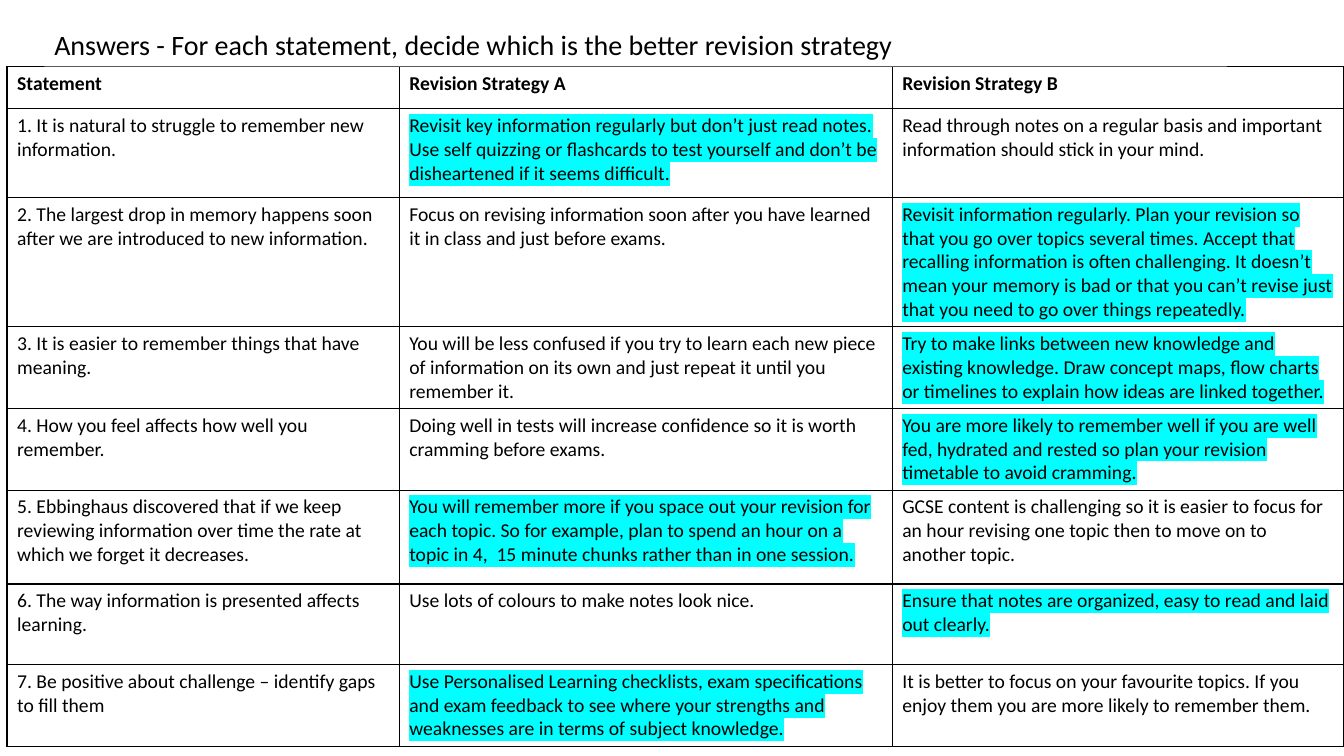
"""Build a slide that marks the better revision strategy for each statement."""
from dataclasses import dataclass

from lxml.etree import SubElement
from pptx import Presentation
from pptx.dml.color import RGBColor
from pptx.enum.shapes import MSO_SHAPE as Preset
from pptx.enum.text import MSO_ANCHOR as Anchor, MSO_AUTO_SIZE as AutoSize, PP_ALIGN as Align
from pptx.oxml.ns import qn
from pptx.slide import Slide
from pptx.table import _Cell as Cell
from pptx.text.text import _Paragraph as Paragraph
from pptx.util import Inches, Pt

BLACK = RGBColor(0x00, 0x00, 0x00)
WHITE = RGBColor(0xFF, 0xFF, 0xFF)
CYAN = RGBColor(0x00, 0xFF, 0xFF)
FONT = "Calibri"
BORDER_WIDTH = Pt(1)

GRID_COLUMNS, GRID_ROWS = 1333, 750
GRID_UNIT = Inches(0.01)
TABLE_LEFT, TABLE_TOP = 7, 66
COLUMN_SPANS = (389, 489, 448)
HEADINGS = ("Statement", "Revision Strategy A", "Revision Strategy B")
HEADING_SPAN = 42
TITLE = "Answers - For each statement, decide which is the better revision strategy"


@dataclass(frozen=True)
class Answer:
    statement: str
    strategy_a: str
    strategy_b: str
    better: str
    row_span: int = 80


ANSWERS = (
    Answer(
        "1. It is natural to struggle to remember new information.",
        "Revisit key information regularly but don’t just read notes. Use self quizzing or "
        "flashcards to test yourself and don’t be disheartened if it seems difficult.",
        "Read through notes on a regular basis and important information should stick in "
        "your mind.",
        "A", 88),
    Answer(
        "2. The largest drop in memory happens soon after we are introduced to new information.",
        "Focus on revising information soon after you have learned it in class and just "
        "before exams.",
        "Revisit information regularly. Plan your revision so that you go over topics several "
        "times. Accept that recalling information is often challenging. It doesn’t mean your "
        "memory is bad or that you can’t revise just that you need to go over things "
        "repeatedly.",
        "B"),
    Answer(
        "3. It is easier to remember things that have meaning.",
        "You will be less confused if you try to learn each new piece of information on its "
        "own and just repeat it until you remember it.",
        "Try to make links between new knowledge and existing knowledge. Draw concept maps, "
        "flow charts or timelines to explain how ideas are linked together.",
        "B"),
    Answer(
        "4. How you feel affects how well you remember.",
        "Doing well in tests will increase confidence so it is worth cramming before exams.",
        "You are more likely to remember well if you are well fed, hydrated and rested so "
        "plan your revision timetable to avoid cramming.",
        "B", 72),
    Answer(
        "5. Ebbinghaus discovered that if we keep reviewing information over time the rate at "
        "which we forget it decreases.",
        "You will remember more if you space out your revision for each topic. So for "
        "example, plan to spend an hour on a topic in 4,  15 minute chunks rather than in "
        "one session.",
        "GCSE content is challenging so it is easier to focus for an hour revising one topic "
        "then to move on to another topic.",
        "A", 93),
    Answer(
        "6. The way information is presented affects learning.",
        "Use lots of colours to make notes look nice.",
        "Ensure that notes are organized, easy to read and laid out clearly.",
        "B"),
    Answer(
        "7. Be positive about challenge – identify gaps to fill them",
        "Use Personalised Learning checklists, exam specifications and exam feedback to see "
        "where your strengths and weaknesses are in terms of subject knowledge.",
        "It is better to focus on your favourite topics. If you enjoy them you are more "
        "likely to remember them.",
        "A"),
)


def grid(span: int) -> int:
    """Turn a number of grid columns or rows into a length."""
    return span * GRID_UNIT


def add_run(paragraph: Paragraph, text: str, size: int, bold: bool = False,
            highlighted: bool = False) -> None:
    """Add one run of text, with a cyan highlight where asked."""
    run = paragraph.add_run()
    run.text = text
    run.font.size = Pt(size)
    run.font.bold = bold
    run.font.color.rgb = BLACK
    if highlighted:
        highlight = SubElement(run._r.get_or_add_rPr(), qn("a:highlight"))
        SubElement(highlight, qn("a:srgbClr"), val=str(CYAN))
    run.font.name = FONT


def add_borders(cell: Cell) -> None:
    """Draw a thin black line on every side of a cell."""
    properties = cell._tc.get_or_add_tcPr()
    for side in ("a:lnL", "a:lnR", "a:lnT", "a:lnB"):
        line = SubElement(properties, qn(side), w=str(BORDER_WIDTH))
        fill = SubElement(line, qn("a:solidFill"))
        SubElement(fill, qn("a:srgbClr"), val=str(BLACK))


def fill_cell(cell: Cell, text: str, bold: bool = False, highlighted: bool = False) -> None:
    """Style a cell and write its text."""
    add_borders(cell)
    cell.fill.solid()
    cell.fill.fore_color.rgb = WHITE
    add_run(cell.text_frame.paragraphs[0], text, 14, bold, highlighted)


def add_answer_table(slide: Slide) -> None:
    """Add the table of statements and strategies."""
    row_spans = (HEADING_SPAN, *(answer.row_span for answer in ANSWERS))
    table = slide.shapes.add_table(
        len(row_spans), len(COLUMN_SPANS), grid(TABLE_LEFT), grid(TABLE_TOP),
        grid(sum(COLUMN_SPANS)), grid(sum(row_spans))).table
    table.first_row = table.horz_banding = False
    for column, span in zip(table.columns, COLUMN_SPANS):
        column.width = grid(span)
    for row, span in zip(table.rows, row_spans):
        row.height = grid(span)
    for column_index, heading in enumerate(HEADINGS):
        fill_cell(table.cell(0, column_index), heading, bold=True)
    for row_index, answer in enumerate(ANSWERS, start=1):
        fill_cell(table.cell(row_index, 0), answer.statement)
        fill_cell(table.cell(row_index, 1), answer.strategy_a, highlighted=answer.better == "A")
        fill_cell(table.cell(row_index, 2), answer.strategy_b, highlighted=answer.better == "B")


def add_title(slide: Slide) -> None:
    """Add the white title bar that overlaps the top of the table."""
    shape = slide.shapes.add_shape(Preset.RECTANGLE, grid(44), grid(22), grid(1173), grid(44))
    shape.shadow.inherit = False
    shape.fill.solid()
    shape.fill.fore_color.rgb = WHITE
    shape.line.fill.background()
    frame = shape.text_frame
    frame.word_wrap = True
    frame.auto_size = AutoSize.SHAPE_TO_FIT_TEXT
    frame.vertical_anchor = Anchor.TOP
    paragraph = frame.paragraphs[0]
    paragraph.alignment = Align.LEFT
    add_run(paragraph, TITLE, 20)


def main() -> None:
    """Create and save the presentation."""
    presentation = Presentation()
    presentation.slide_width = grid(GRID_COLUMNS)
    presentation.slide_height = grid(GRID_ROWS)
    slide = presentation.slides.add_slide(presentation.slide_layouts[6])
    add_answer_table(slide)
    add_title(slide)
    presentation.save("out.pptx")


if __name__ == "__main__":
    main()
